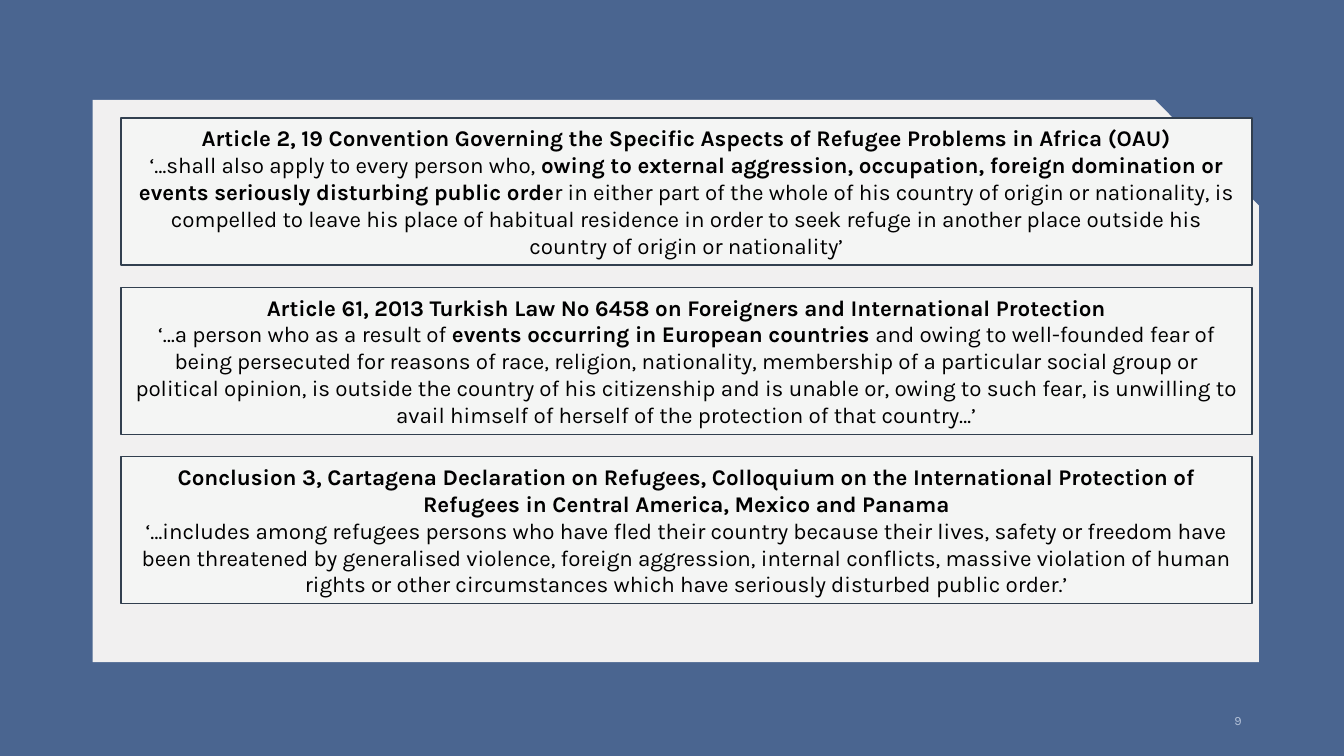
from pptx import Presentation
from pptx.dml.color import RGBColor
from pptx.enum.shapes import MSO_SHAPE
from pptx.enum.text import MSO_ANCHOR, PP_ALIGN
from pptx.util import Pt

RECTANGLE = MSO_SHAPE.RECTANGLE
MIDDLE = MSO_ANCHOR.MIDDLE
CENTER, RIGHT = PP_ALIGN.CENTER, PP_ALIGN.RIGHT

BLUE = RGBColor(0x4A, 0x65, 0x90)
PANEL_GREY = RGBColor(0xF1, 0xF0, 0xF0)
BOX_GREY = RGBColor(0xF4, 0xF5, 0xF4)
OUTLINE = RGBColor(0x32, 0x3F, 0x4F)
BLACK = RGBColor(0, 0, 0)
PALE_BLUE = RGBColor(0xB2, 0xC0, 0xD7)
FONT = "Karla"

PANEL_POINTS = [(66.2, 71.3), (825.1, 71.3), (899.3, 146.9), (899.3, 473), (66.2, 473)]
BOX_LEFT, BOX_TOP, BOX_WIDTH, BOX_HEIGHT = 86.4, 84.2, 807.8, 105.1
BOX_PITCH = 121

DEFINITIONS = [
    (
        "Article 2, 19 Convention Governing the Specific Aspects of Refugee Problems in Africa (OAU)",
        [
            ("‘…shall also apply to every person who, ", False),
            ("owing to external aggression, occupation, foreign domination or events "
             "seriously disturbing public orde", True),
            ("r in either part of the whole of his country of origin or nationality, is "
             "compelled to leave his place of habitual residence in order to seek refuge in "
             "another place outside his country of origin or nationality’", False),
        ],
    ),
    (
        "Article 61, 2013 Turkish Law No 6458 on Foreigners and International Protection",
        [
            ("‘…a person who as a result of ", False),
            ("events occurring in European countries ", True),
            ("and owing to well-founded fear of being persecuted for reasons of race, "
             "religion, nationality, membership of a particular social group or political "
             "opinion, is outside the country of his citizenship and is unable or, owing to "
             "such fear, is unwilling to avail himself of herself of the protection of that "
             "country…’", False),
        ],
    ),
    (
        "Conclusion 3, Cartagena Declaration on Refugees, Colloquium on the International "
        "Protection of Refugees in Central America, Mexico and Panama",
        [
            ("‘…includes among refugees persons who have fled their country because their "
             "lives, safety or freedom have been threatened by generalised violence, foreign "
             "aggression, internal conflicts, massive violation of human rights or other "
             "circumstances which have seriously disturbed public order.’", False),
        ],
    ),
]


def add_panel(s):
    points = [(Pt(x), Pt(y)) for x, y in PANEL_POINTS]
    builder = s.shapes.build_freeform(*points[0])
    builder.add_line_segments(points[1:], close=True)
    sp = builder.convert_to_shape()
    sp.shadow.inherit = False
    sp.fill.solid()
    sp.fill.fore_color.rgb = PANEL_GREY
    sp.line.fill.background()


def write_paragraph(p, runs, size, color, align):
    p.alignment = align
    p.font.name = FONT
    p.font.size = Pt(size)
    p.font.color.rgb = color
    for text, bold in runs:
        r = p.add_run()
        r.text = text
        r.font.bold = bold


def add_definition(s, top, heading, quote):
    sp = s.shapes.add_shape(RECTANGLE, Pt(BOX_LEFT), Pt(top), Pt(BOX_WIDTH), Pt(BOX_HEIGHT))
    sp.shadow.inherit = False
    sp.fill.solid()
    sp.fill.fore_color.rgb = BOX_GREY
    sp.line.color.rgb = OUTLINE
    sp.line.width = Pt(1)
    tf = sp.text_frame
    tf.word_wrap = True
    tf.vertical_anchor = MIDDLE
    write_paragraph(tf.paragraphs[0], [(heading, True)], 16, BLACK, CENTER)
    write_paragraph(tf.add_paragraph(), quote, 16, BLACK, CENTER)


def add_page_number(s, number):
    tf = s.shapes.add_textbox(Pt(678), Pt(500.5), Pt(216), Pt(28.8)).text_frame
    tf.word_wrap = True
    tf.vertical_anchor = MIDDLE
    write_paragraph(tf.paragraphs[0], [(number, False)], 9, PALE_BLUE, RIGHT)


def main():
    prs = Presentation()
    prs.slide_width, prs.slide_height = Pt(960), Pt(540)
    s = prs.slides.add_slide(prs.slide_layouts[6])
    s.background.fill.solid()
    s.background.fill.fore_color.rgb = BLUE
    add_panel(s)
    add_page_number(s, "9")
    for i, (heading, quote) in enumerate(DEFINITIONS):
        add_definition(s, BOX_TOP + i * BOX_PITCH, heading, quote)
    prs.save("out.pptx")


if __name__ == "__main__":
    main()
